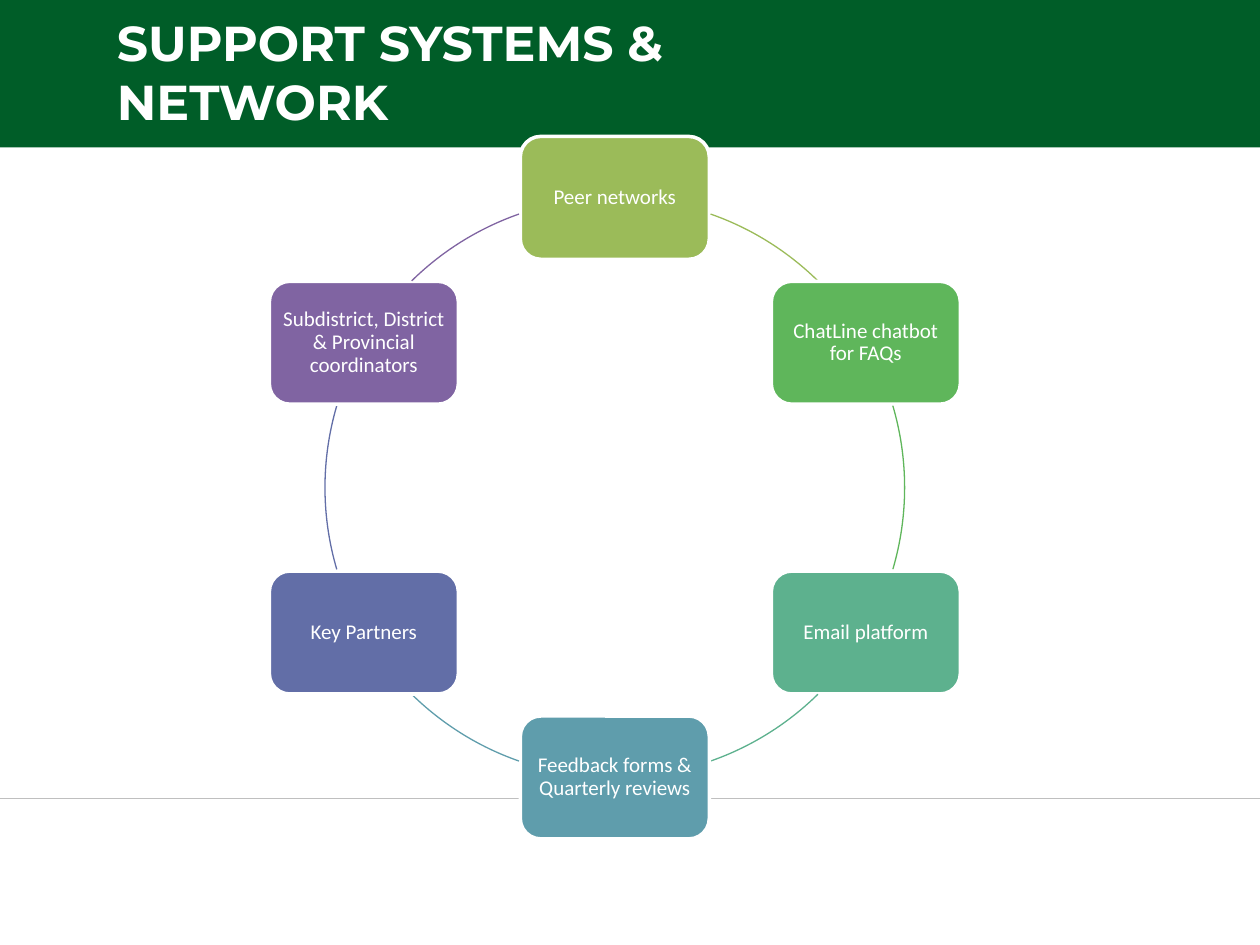
from math import cos, radians, sin

from lxml.etree import SubElement
from pptx import Presentation
from pptx.dml.color import RGBColor
from pptx.enum.shapes import MSO_CONNECTOR, MSO_SHAPE
from pptx.enum.text import MSO_ANCHOR, PP_ALIGN
from pptx.oxml.ns import qn
from pptx.util import Inches, Pt

WIDE, HIGH = Inches(10), Inches(7.5)
HUES = {
    "band": "005D28", "rule": "BFBFBF", "white": "FFFFFF",
    "lime": "9BBB59", "green": "5FB65B", "mint": "5DB18E",
    "teal": "5F9DAC", "blue": "626EA7", "plum": "8064A2",
}

# Ring centre, radius and node size
MID_X, MID_Y = 0.488 * WIDE, 0.516 * HIGH
RAD = 0.23 * WIDE
NODE_W, NODE_H = 0.15 * WIDE, 0.13 * HIGH

# Clockwise from the top: label, colour, start and end angle of the arc after it
NODES = [
    ("Peer networks", "lime", 289.3, 314.5),
    ("ChatLine chatbot for FAQs", "green", 343.6, 16.4),
    ("Email platform", "mint", 45.5, 70.7),
    ("Feedback forms & Quarterly reviews", "teal", 109.3, 134.5),
    ("Key Partners", "blue", 163.6, 196.4),
    ("Subdistrict, District & Provincial coordinators", "plum", 225.5, 250.7),
]


def tint(name):
    return RGBColor.from_string(HUES[name])


def write(shape, text, font="Calibri", size=12, bold=False, align=PP_ALIGN.CENTER,
          anchor=MSO_ANCHOR.MIDDLE, inset=0.05, space=0.9):
    frame = shape.text_frame
    frame.word_wrap = True
    frame.vertical_anchor = anchor
    frame.margin_left = frame.margin_right = Inches(inset)
    frame.margin_top = frame.margin_bottom = Inches(0.05)
    para = frame.paragraphs[0]
    para.alignment = align
    para.line_spacing = space
    run = para.add_run()
    run.text = text
    run.font.name = font
    run.font.size = Pt(size)
    run.font.bold = bold
    run.font.color.rgb = tint("white")


def stroke(shape, hue, width):
    shape.line.color.rgb = tint(hue)
    shape.line.width = Pt(width)


def block(slide, kind, left, top, wide, high, hue):
    shape = slide.shapes.add_shape(kind, int(left), int(top), int(wide), int(high))
    shape.shadow.inherit = False
    shape.fill.solid()
    shape.fill.fore_color.rgb = tint(hue)
    shape.line.fill.background()
    return shape


def node(slide, turn, text, hue):
    x = MID_X + RAD * sin(radians(turn))
    y = MID_Y - RAD * cos(radians(turn))
    box = block(slide, MSO_SHAPE.ROUNDED_RECTANGLE, x - NODE_W / 2, y - NODE_H / 2,
                NODE_W, NODE_H, hue)
    stroke(box, "white", 2)
    write(box, text)


def arc(slide, start, end, hue):
    curve = block(slide, MSO_SHAPE.ARC, MID_X - RAD, MID_Y - RAD, 2 * RAD, 2 * RAD, hue)
    curve.fill.background()
    # Angles are stored in 60000ths of a degree, adjustments in 100000ths
    curve.adjustments[0] = start * 0.6
    curve.adjustments[1] = end * 0.6
    stroke(curve, hue, 0.75)


def rule(slide, y):
    line = slide.shapes.add_connector(MSO_CONNECTOR.STRAIGHT, 0, int(y), WIDE, int(y))
    stroke(line, "rule", 0.75)
    SubElement(line.element.spPr, qn("a:effectLst"))


def main():
    deck = Presentation()
    deck.slide_width, deck.slide_height = WIDE, HIGH
    slide = deck.slides.add_slide(deck.slide_layouts[6])

    # Header band and footer rule
    block(slide, MSO_SHAPE.RECTANGLE, 0, 0, WIDE, 0.156 * HIGH, "band")
    rule(slide, 0.845 * HIGH)

    # Title
    title = slide.shapes.add_textbox(int(0.083 * WIDE), 0, int(0.608 * WIDE),
                                     int(0.144 * HIGH))
    write(title, "SUPPORT SYSTEMS & NETWORK", font="Montserrat", size=28, bold=True,
          align=PP_ALIGN.LEFT, anchor=MSO_ANCHOR.BOTTOM, inset=0.1, space=1.0)

    # Ring of nodes, each followed by its arc
    step = 360 / len(NODES)
    for i, (text, hue, start, end) in enumerate(NODES):
        node(slide, i * step, text, hue)
        arc(slide, start, end, hue)

    deck.save("out.pptx")


if __name__ == "__main__":
    main()
